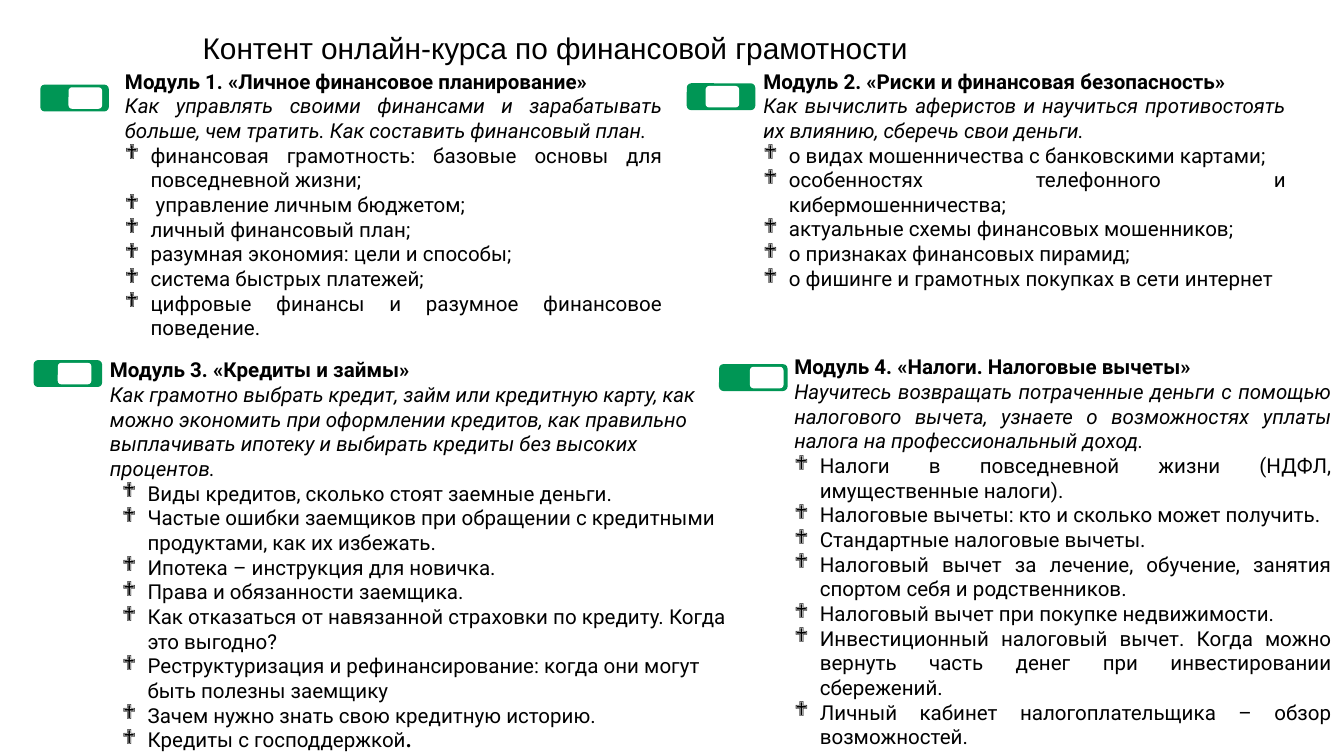
import pptx
import pptx.dml.color
import pptx.enum.shapes
import pptx.enum.text
import pptx.util
from lxml import etree
from pptx.oxml.ns import qn
from pptx.util import Inches

ANCHOR = pptx.enum.text.MSO_ANCHOR
ALIGN = pptx.enum.text.PP_ALIGN


def rgb(value):
    return pptx.dml.color.RGBColor.from_string(value)


class CourseSlide:
    ink, green, white = "000000", "009655", "FFFFFF"
    title_font, body_font, bullet_font = "Arial", "Roboto", "Wingdings"
    title_size, body_size = 16, 11
    hanging = 0.19

    def __init__(self, slide):
        self.slide = slide

    def style(self, run, font, size, bold=False, italic=False):
        run.font.name = font
        run.font.size = pptx.util.Pt(size)
        run.font.bold = bold
        run.font.italic = italic
        run.font.color.rgb = rgb(self.ink)

    def text_frame(self, left, top, width, height, wrap):
        box = self.slide.shapes.add_textbox(
            Inches(left), Inches(top), Inches(width), Inches(height))
        frame = box.text_frame
        frame.word_wrap = wrap
        frame.auto_size = pptx.enum.text.MSO_AUTO_SIZE.SHAPE_TO_FIT_TEXT
        return frame

    def title(self, text, *place):
        frame = self.text_frame(*place, wrap=False)
        frame.text = text
        self.style(frame.paragraphs[0].runs[0], self.title_font, self.title_size)

    def rounded(self, left, top, width, height, color):
        bar = self.slide.shapes.add_shape(
            pptx.enum.shapes.MSO_SHAPE.ROUNDED_RECTANGLE,
            Inches(left), Inches(top), Inches(width), Inches(height))
        bar.shadow.inherit = False
        bar.fill.solid()
        bar.fill.fore_color.rgb = rgb(color)
        bar.line.fill.background()

    def toggle(self, left, top, knob_left):
        """Draw a green switch with a white knob."""
        self.rounded(left, top, 0.51, 0.2, self.green)
        self.rounded(knob_left, top + 0.02, 0.25, 0.16, self.white)

    def bullet(self, paragraph, indent):
        properties = paragraph._p.get_or_add_pPr()
        properties.set("marL", str(Inches(indent)))
        properties.set("indent", str(-Inches(self.hanging)))
        etree.SubElement(properties, qn("a:buFont")).set("typeface", self.bullet_font)
        etree.SubElement(properties, qn("a:buChar")).set("char", "❖")

    def module(self, place, heading, summary, topics, justified=True, indent=0.19):
        """Write a module's heading, summary and bulleted topics; return the frame."""
        frame = self.text_frame(*place, wrap=True)
        if justified:
            frame.vertical_anchor = ANCHOR.MIDDLE
            frame.margin_left = frame.margin_right = Inches(0.06)
            frame.margin_top = frame.margin_bottom = Inches(0.06)
        frame.text = "\n".join([heading, summary, *topics])
        for row, paragraph in enumerate(frame.paragraphs):
            paragraph.alignment = ALIGN.JUSTIFY if justified else ALIGN.LEFT
            if row > 1:
                self.bullet(paragraph, indent)
            self.style(paragraph.runs[0], self.body_font, self.body_size,
                       bold=row == 0, italic=row == 1)
        return frame


def main():
    deck = pptx.Presentation()
    deck.slide_width = Inches(10)
    deck.slide_height = deck.slide_width * 9 // 16
    course = CourseSlide(deck.slides.add_slide(deck.slide_layouts[6]))

    course.title("Контент онлайн-курса по финансовой грамотности",
                 1.41, 0.17, 5.6, 0.37)

    for left, top, knob_left in [(0.3, 0.63, 0.51), (5.11, 0.62, 5.25),
                                 (0.25, 2.68, 0.43), (5.35, 2.71, 5.58)]:
        course.toggle(left, top, knob_left)

    course.module(
        (0.87, 0.54, 4.12, 1.96),
        "Модуль 1. «Личное финансовое планирование»",
        "Как управлять своими финансами и зарабатывать больше, чем тратить. "
        "Как составить финансовый план.",
        ["финансовая грамотность: базовые основы для повседневной жизни;",
         " управление личным бюджетом;",
         "личный финансовый план;",
         "разумная экономия: цели и способы;",
         "система быстрых платежей;",
         "цифровые финансы и разумное финансовое поведение."])

    course.module(
        (5.62, 0.54, 4.01, 1.59),
        "Модуль 2. «Риски и финансовая безопасность»",
        "Как вычислить аферистов и научиться противостоять их влиянию, "
        "сберечь свои деньги.",
        ["о видах мошенничества с банковскими картами;",
         "особенностях телефонного и кибермошенничества;",
         "актуальные схемы финансовых мошенников;",
         "о признаках финансовых пирамид;",
         "о фишинге и грамотных покупках в сети интернет"])

    credits = course.module(
        (0.72, 2.61, 4.94, 2.88),
        "Модуль 3. «Кредиты и займы»",
        "Как грамотно выбрать кредит, займ или кредитную карту, как можно "
        "экономить при оформлении кредитов, как правильно выплачивать ипотеку "
        "и выбирать кредиты без высоких процентов.",
        ["Виды кредитов, сколько стоят заемные деньги.",
         "Частые ошибки заемщиков при обращении с кредитными продуктами, "
         "как их избежать.",
         "Ипотека – инструкция для новичка.",
         "Права и обязанности заемщика.",
         "Как отказаться от навязанной страховки по кредиту. Когда это выгодно?",
         "Реструктуризация и рефинансирование: когда они могут быть полезны "
         "заемщику",
         "Зачем нужно знать свою кредитную историю.",
         "Кредиты с господдержкой"],
        justified=False, indent=0.28)
    full_stop = credits.paragraphs[-1].add_run()
    full_stop.text = "."
    course.style(full_stop, "Times New Roman", course.body_size, bold=True)

    course.module(
        (5.85, 2.66, 4.12, 2.89),
        "Модуль 4. «Налоги. Налоговые вычеты»",
        "Научитесь возвращать потраченные деньги с помощью налогового вычета, "
        "узнаете о возможностях уплаты налога на профессиональный доход.",
        ["Налоги в повседневной жизни (НДФЛ, имущественные налоги).",
         "Налоговые вычеты: кто и сколько может получить.",
         "Стандартные налоговые вычеты.",
         "Налоговый вычет за лечение, обучение, занятия спортом себя и "
         "родственников.",
         "Налоговый вычет при покупке недвижимости.",
         "Инвестиционный налоговый вычет. Когда можно вернуть часть денег при "
         "инвестировании сбережений.",
         "Личный кабинет налогоплательщика – обзор возможностей."])

    deck.save("out.pptx")


if __name__ == "__main__":
    main()
